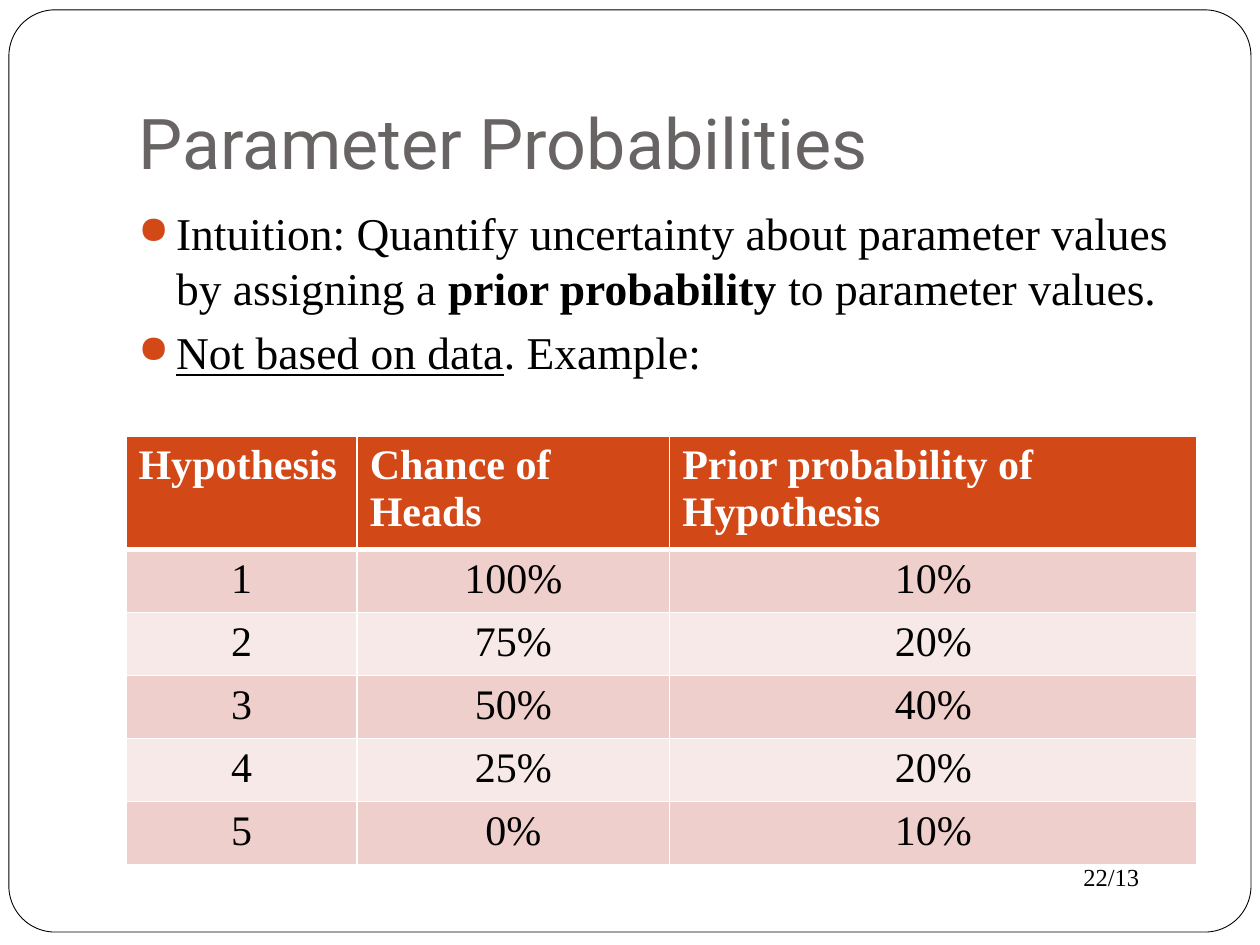
from dataclasses import dataclass

from lxml.etree import SubElement
from pptx import Presentation
from pptx.dml.color import RGBColor
from pptx.enum.shapes import MSO_SHAPE
from pptx.enum.text import MSO_ANCHOR, PP_ALIGN
from pptx.oxml.ns import qn
from pptx.util import Cm, Pt

COLORS = {
    "ink": "000000",
    "paper": "FFFFFF",
    "title": "696464",
    "accent": "D34817",
    "band_dark": "EFCFCC",
    "band_light": "F7E9E8",
}
SERIF = "Times New Roman"


@dataclass
class Box:
    left: float
    top: float
    width: float
    height: float

    def lengths(self) -> list:
        return [Cm(v) for v in (self.left, self.top, self.width, self.height)]


@dataclass
class Span:
    text: str
    bold: bool = False
    underline: bool = False


BULLETS = [
    [
        Span("Intuition: Quantify uncertainty about parameter values by assigning a "),
        Span("prior probability ", bold=True),
        Span("to parameter values."),
    ],
    [Span("Not based on data", underline=True), Span(". Example:")],
]
HEADER = ["Hypothesis", "Chance of Heads", "Prior probability of Hypothesis"]
HYPOTHESES = [
    ("1", "100%", "10%"),
    ("2", "75%", "20%"),
    ("3", "50%", "40%"),
    ("4", "25%", "20%"),
    ("5", "0%", "10%"),
]
COLUMN_WIDTHS = [4.66, 6.3, 10.63]
ROW_HEIGHT = 1.04


def rgb(name: str) -> RGBColor:
    return RGBColor.from_string(COLORS[name])


def add_run(p, text: str, *, size: float, font: str = SERIF, color: str = "ink",
            bold: bool = False, underline: bool = False) -> None:
    r = p.add_run()
    r.text = text
    r.font.size = Pt(size)
    r.font.name = font
    r.font.color.rgb = rgb(color)
    r.font.bold = bold
    r.font.underline = underline


def add_text_frame(slide, box: Box, anchor=MSO_ANCHOR.TOP):
    tf = slide.shapes.add_textbox(*box.lengths()).text_frame
    tf.word_wrap = True
    tf.vertical_anchor = anchor
    return tf


def set_bullet(p) -> None:
    pPr = p._p.get_or_add_pPr()
    pPr.set("marL", str(Cm(0.76)))
    pPr.set("indent", str(-Cm(0.76)))
    color = SubElement(pPr, qn("a:buClr"))
    SubElement(color, qn("a:srgbClr"), val=COLORS["accent"])
    SubElement(pPr, qn("a:buSzPct"), val="85000")
    SubElement(pPr, qn("a:buChar"), char="●")


def set_borders(cell, bottom: float = 1) -> None:
    """Draw white cell borders; call before the fill, which must follow them in the XML."""
    tcPr = cell._tc.get_or_add_tcPr()
    for side, width in (("L", 1), ("R", 1), ("T", 1), ("B", bottom)):
        line = SubElement(tcPr, qn(f"a:ln{side}"), w=str(Pt(width)))
        fill = SubElement(line, qn("a:solidFill"))
        SubElement(fill, qn("a:srgbClr"), val=COLORS["paper"])


def add_frame(slide) -> None:
    sp = slide.shapes.add_shape(MSO_SHAPE.ROUNDED_RECTANGLE,
                                *Box(0.18, 0.2, 25.04, 18.59).lengths())
    sp.adjustments[0] = 0.05
    sp.shadow.inherit = False
    sp.fill.solid()
    sp.fill.fore_color.rgb = rgb("paper")
    sp.line.color.rgb = rgb("ink")
    sp.line.width = Pt(0.5)


def add_bullets(slide, box: Box) -> None:
    tf = add_text_frame(slide, box)
    for i, spans in enumerate(BULLETS):
        p = tf.paragraphs[0] if i == 0 else tf.add_paragraph()
        p.space_before = Pt(5.8)
        set_bullet(p)
        for span in spans:
            add_run(p, span.text, size=26, bold=span.bold, underline=span.underline)


def add_hypothesis_table(slide, box: Box) -> None:
    rows = [HEADER, *HYPOTHESES]
    table = slide.shapes.add_table(len(rows), len(HEADER), *box.lengths()).table
    for column, width in zip(table.columns, COLUMN_WIDTHS):
        column.width = Cm(width)
    for i, values in enumerate(rows):
        table.rows[i].height = Cm(ROW_HEIGHT)
        is_header = i == 0
        band = "accent" if is_header else "band_dark" if i % 2 else "band_light"
        for j, text in enumerate(values):
            cell = table.cell(i, j)
            set_borders(cell, bottom=3 if is_header else 1)
            cell.fill.solid()
            cell.fill.fore_color.rgb = rgb(band)
            p = cell.text_frame.paragraphs[0]
            p.alignment = PP_ALIGN.LEFT if is_header else PP_ALIGN.CENTER
            add_run(p, text, size=24, bold=is_header,
                    color="paper" if is_header else "ink")


def main() -> None:
    prs = Presentation()
    prs.slide_width, prs.slide_height = Cm(25.4), Cm(19.05)
    slide = prs.slides.add_slide(prs.slide_layouts[6])

    add_frame(slide)
    number = add_text_frame(slide, Box(21.59, 17.25, 2.54, 0.86))
    add_run(number.paragraphs[0], "22/13", size=14)

    title = add_text_frame(slide, Box(2.54, 0.76, 21.59, 3.18), MSO_ANCHOR.BOTTOM)
    title.margin_bottom = Cm(0.25)
    add_run(title.paragraphs[0], "Parameter Probabilities",
            size=40, font="Roboto", color="title")

    add_bullets(slide, Box(2.54, 4.01, 21.59, 4.7))
    add_hypothesis_table(slide, Box(2.54, 8.79, 21.59, 8.64))
    prs.save("out.pptx")


if __name__ == "__main__":
    main()
